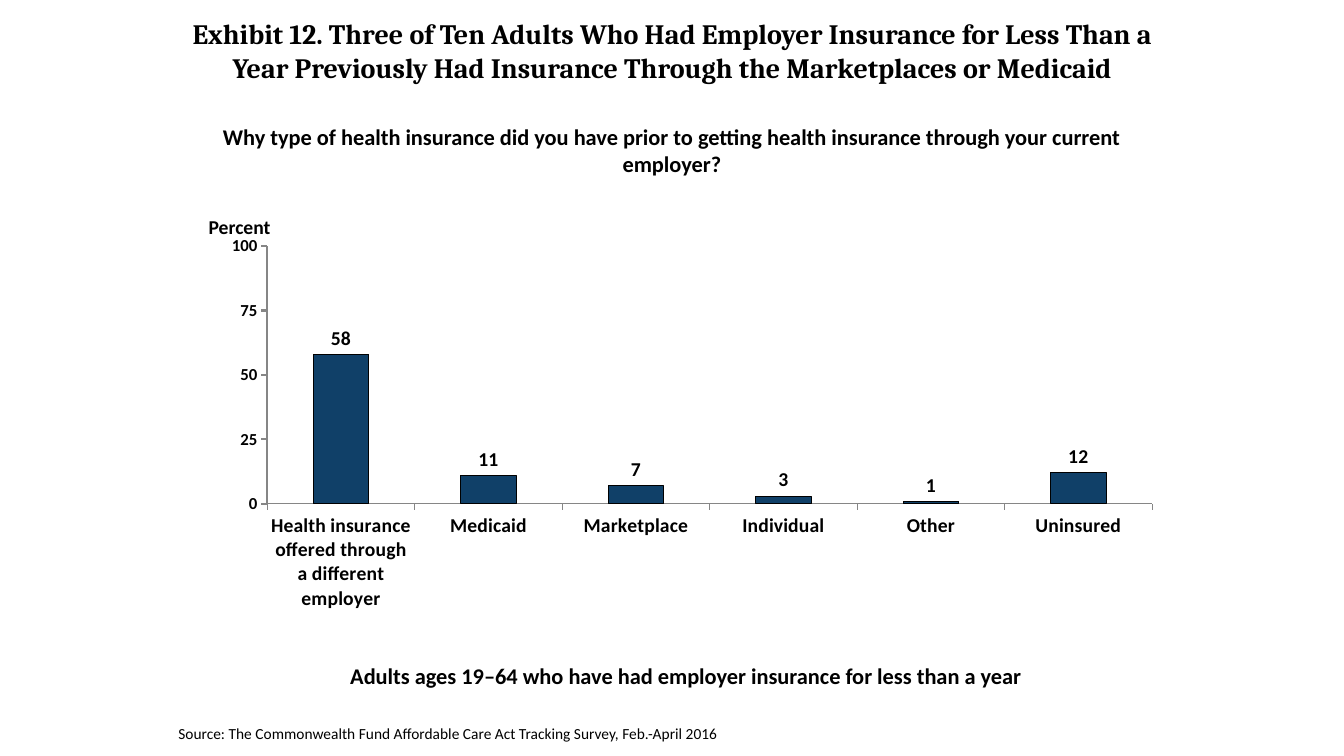
"""Build the slide on prior insurance of adults new to employer coverage."""
from lxml.etree import SubElement
from pptx import Presentation
from pptx.chart.data import CategoryChartData
from pptx.dml.color import RGBColor
from pptx.enum.chart import XL_CHART_TYPE, XL_LABEL_POSITION, XL_TICK_MARK
from pptx.enum.text import MSO_ANCHOR, PP_ALIGN
from pptx.oxml.ns import qn
from pptx.util import Inches, Pt


def color(value):
    return RGBColor.from_string(value)


def style(font, size, bold=True, name="Calibri"):
    font.name = name
    font.size = Pt(size)
    font.bold = bold
    font.color.rgb = color("000000")


deck = Presentation()
deck.slide_width = Inches(13.33)
deck.slide_height = Inches(7.5)
page = deck.slides.add_slide(deck.slide_layouts[6])

chart_data = CategoryChartData(number_format="0")
chart_data.categories = [
    "Health insurance offered through a different employer",
    "Medicaid", "Marketplace", "Individual", "Other", "Uninsured",
]
chart_data.add_series("Series 1", (58, 11, 7, 3, 1, 12))
chart = page.shapes.add_chart(
    XL_CHART_TYPE.COLUMN_CLUSTERED,
    Inches(2.02), Inches(1.91), Inches(9.56), Inches(4.51), chart_data,
).chart
chart.has_legend = False
chart.has_title = False
style(chart.font, 12)

percent_axis = chart.value_axis
percent_axis.minimum_scale = 0
percent_axis.maximum_scale = 100
percent_axis.major_unit = 25
percent_axis.has_major_gridlines = False
percent_axis.tick_labels.number_format = "0"
percent_axis.tick_labels.number_format_is_linked = False
for axis, size, width in ((percent_axis, 12, 1.5), (chart.category_axis, 14, 0.75)):
    axis.major_tick_mark = XL_TICK_MARK.OUTSIDE
    axis.format.line.color.rgb = color("868686")
    axis.format.line.width = Pt(width)
    style(axis.tick_labels.font, size)

plot = chart.plots[0]
plot.gap_width = 166
plot.vary_by_categories = False
bars = plot.series[0]
bars.format.fill.solid()
bars.format.fill.fore_color.rgb = color("104068")
bars.format.line.color.rgb = color("000000")
bars.format.line.width = Pt(0.75)
labels = bars.data_labels
labels.show_value = True
labels.position = XL_LABEL_POSITION.OUTSIDE_END
labels.number_format = "0"
labels.number_format_is_linked = False
style(labels.font, 14)

plot_area = chart.element.find(".//" + qn("c:plotArea"))
layout = plot_area.find(qn("c:layout"))
if layout is None:
    layout = SubElement(plot_area, qn("c:layout"))
    plot_area.insert(0, layout)
manual = SubElement(layout, qn("c:manualLayout"))
for tag, value in (
    ("layoutTarget", "inner"), ("xMode", "edge"), ("yMode", "edge"),
    ("x", "0.066"), ("y", "0.118"), ("w", "0.918"), ("h", "0.567"),
):
    SubElement(manual, qn("c:" + tag)).set("val", value)

title = ("Exhibit 12. Three of Ten Adults Who Had Employer Insurance for Less Than a "
         "Year Previously Had Insurance Through the Marketplaces or Medicaid")
question = ("Why type of health insurance did you have prior to getting health "
            "insurance through your current employer?")
group = "Adults ages 19–64 who have had employer insurance for less than a year"
source = "Source: The Commonwealth Fund Affordable Care Act Tracking Survey, Feb.-April 2016"
center, left = PP_ALIGN.CENTER, PP_ALIGN.LEFT
top, middle = MSO_ANCHOR.TOP, MSO_ANCHOR.MIDDLE
for text, place, size, bold, name, alignment, anchor, wrap in (
    (title, (1.67, 0.1, 10, 0.8), 20, True, "Cambria", center, middle, True),
    (question, (1.8, 1.17, 9.73, 0.64), 16, True, "Calibri", center, top, True),
    ("Percent", (1.97, 2.08, 0.82, 0.34), 14, True, "Calibri", left, top, False),
    (group, (2.39, 6.52, 8.83, 0.37), 16, True, "Calibri", center, top, True),
    (source, (1.67, 7.13, 9.2, 0.29), 11, False, "Calibri", left, top, True),
):
    box = page.shapes.add_textbox(*map(Inches, place))
    frame = box.text_frame
    frame.word_wrap = wrap
    frame.vertical_anchor = anchor
    frame.text = text
    paragraph = frame.paragraphs[0]
    paragraph.alignment = alignment
    style(paragraph.runs[0].font, size, bold, name)

deck.save("out.pptx")
